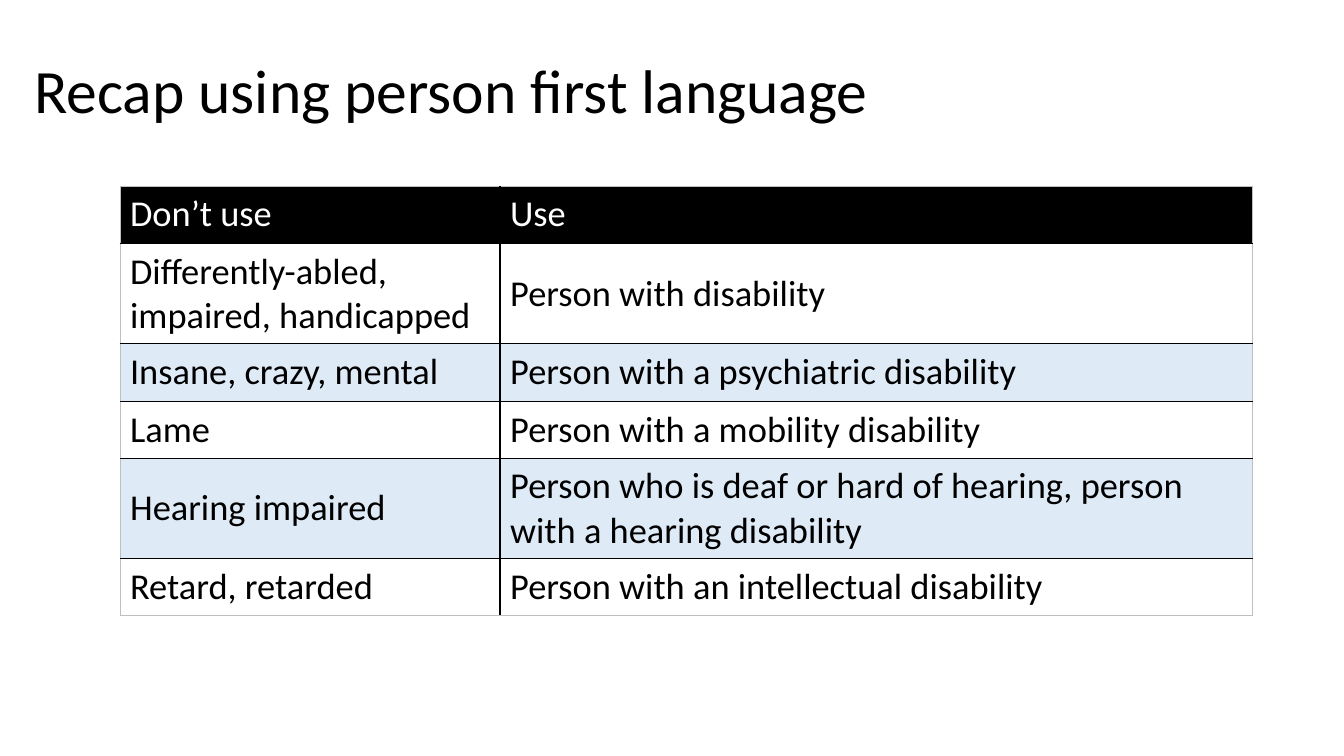
from dataclasses import dataclass

import pptx
import pptx.dml.color
import pptx.enum.text
import pptx.oxml
import pptx.oxml.ns
import pptx.util
from pptx.util import Inches


def rgb(value):
    return pptx.dml.color.RGBColor.from_string(value)


@dataclass(frozen=True)
class Theme:
    font: str = "Calibri"
    text: str = "000000"
    header_text: str = "FFFFFF"
    header_fill: str = "000000"
    band_fill: str = "DEEBF7"
    inner_border: str = "000000"
    outer_border: str = "BFBFBF"
    title_size: int = 44
    table_size: int = 26


THEME = Theme()
MIDDLE = pptx.enum.text.MSO_ANCHOR.MIDDLE
COLUMN_WIDTHS = (3.77, 7.46)
ROW_HEIGHTS = (0.57, 0.99, 0.57, 0.57, 0.99, 0.57)
ROWS = (
    ("Don’t use", "Use"),
    ("Differently-abled, impaired, handicapped", "Person with disability"),
    ("Insane, crazy, mental", "Person with a psychiatric disability"),
    ("Lame", "Person with a mobility disability"),
    ("Hearing impaired",
     "Person who is deaf or hard of hearing, person with a hearing disability"),
    ("Retard, retarded", "Person with an intellectual disability"),
)


def write_text(frame, text, size, color):
    frame.text = text
    paragraph = frame.paragraphs[0]
    paragraph.font.name = THEME.font
    paragraph.font.size = pptx.util.Pt(size)
    paragraph.font.bold = False
    paragraph.font.color.rgb = rgb(color)
    return paragraph


def add_title(slide, text):
    box = slide.shapes.add_textbox(Inches(0.24), 0, Inches(12.18), Inches(1.85))
    box.text_frame.word_wrap = True
    box.text_frame.vertical_anchor = MIDDLE
    paragraph = write_text(box.text_frame, text, THEME.title_size, THEME.text)
    paragraph.line_spacing = 0.9


def add_borders(cell, outer_sides):
    """Line all four sides, lighter and thinner on the table's outer edge."""
    properties = cell._tc.get_or_add_tcPr()
    for side in "LRTB":
        outer = side in outer_sides
        color = THEME.outer_border if outer else THEME.inner_border
        width = pptx.util.Pt(0.5 if outer else 1)
        properties.append(pptx.oxml.parse_xml(
            f'<a:ln{side} {pptx.oxml.ns.nsdecls("a")} w="{width}"><a:solidFill>'
            f'<a:srgbClr val="{color}"/></a:solidFill></a:ln{side}>'))


def style_cell(cell, text, row, column):
    edges = {"L": column == 0, "R": column == len(COLUMN_WIDTHS) - 1,
             "T": row == 0, "B": row == len(ROWS) - 1}
    add_borders(cell, [side for side, outer in edges.items() if outer])
    header = row == 0
    if row % 2:
        cell.fill.background()
    else:
        cell.fill.solid()
        cell.fill.fore_color.rgb = rgb(THEME.header_fill if header else THEME.band_fill)
    if not header:
        cell.vertical_anchor = MIDDLE
    write_text(cell.text_frame, text, THEME.table_size,
               THEME.header_text if header else THEME.text)


def add_language_table(slide):
    table = slide.shapes.add_table(
        len(ROWS), len(COLUMN_WIDTHS), Inches(1.19), Inches(1.85),
        Inches(sum(COLUMN_WIDTHS)), Inches(sum(ROW_HEIGHTS))).table
    table.horz_banding = False
    for column, width in zip(table.columns, COLUMN_WIDTHS):
        column.width = Inches(width)
    for row, height in zip(table.rows, ROW_HEIGHTS):
        row.height = Inches(height)
    for row, texts in enumerate(ROWS):
        for column, text in enumerate(texts):
            style_cell(table.cell(row, column), text, row, column)


def main():
    presentation = pptx.Presentation()
    presentation.slide_width = Inches(13.33)
    presentation.slide_height = Inches(7.5)
    slide = presentation.slides.add_slide(presentation.slide_layouts[6])
    add_title(slide, "Recap using person first language")
    add_language_table(slide)
    presentation.save("out.pptx")


if __name__ == "__main__":
    main()
